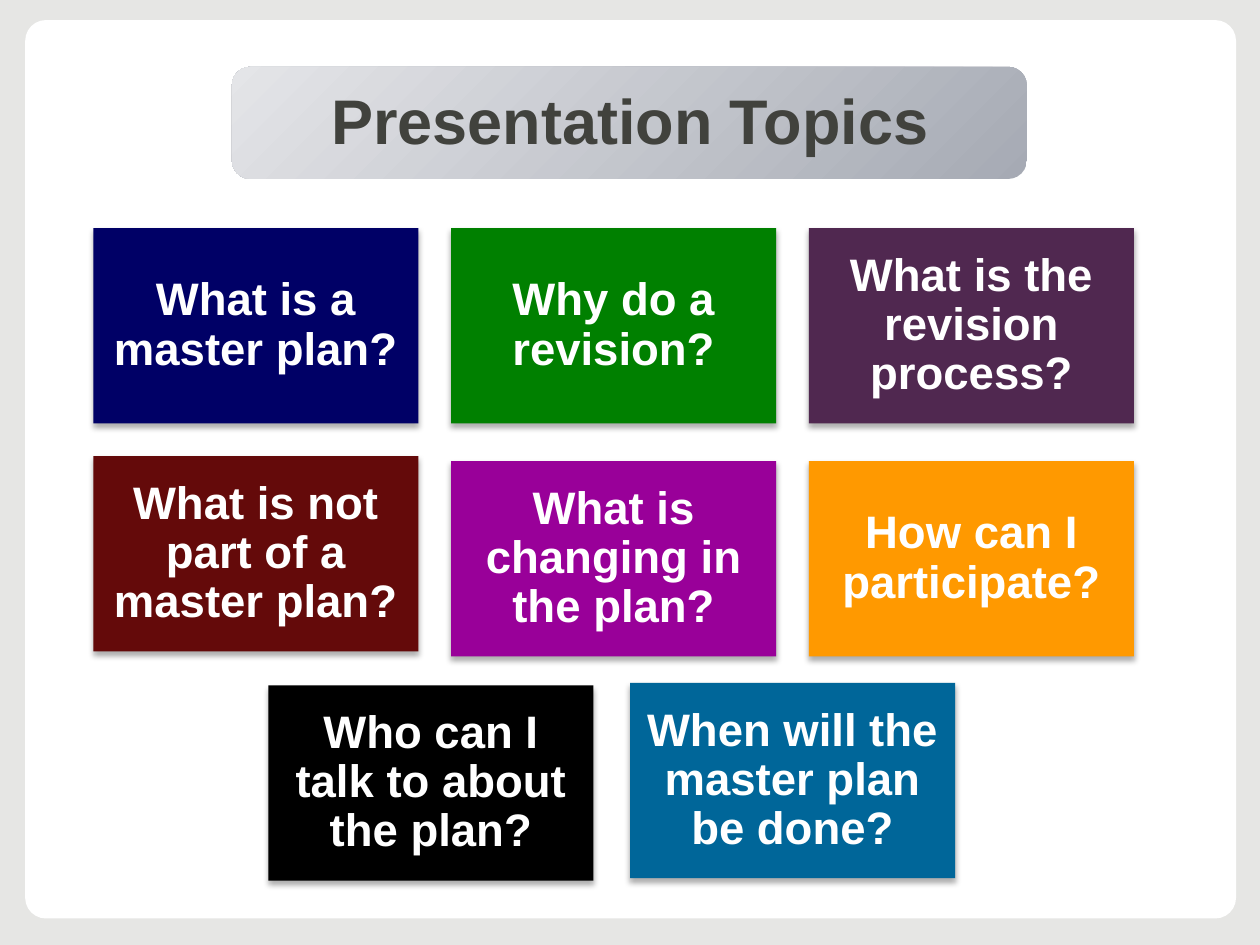
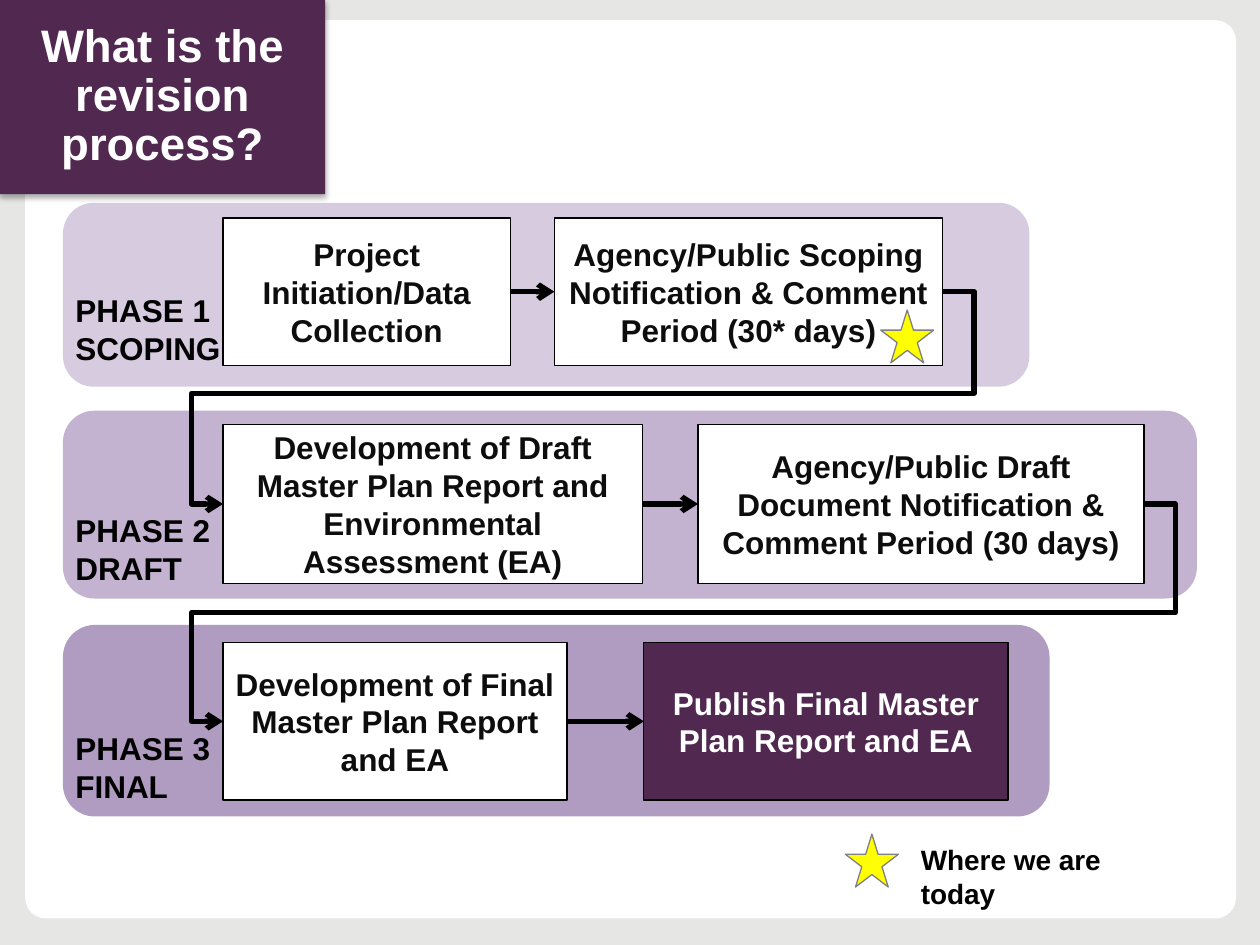
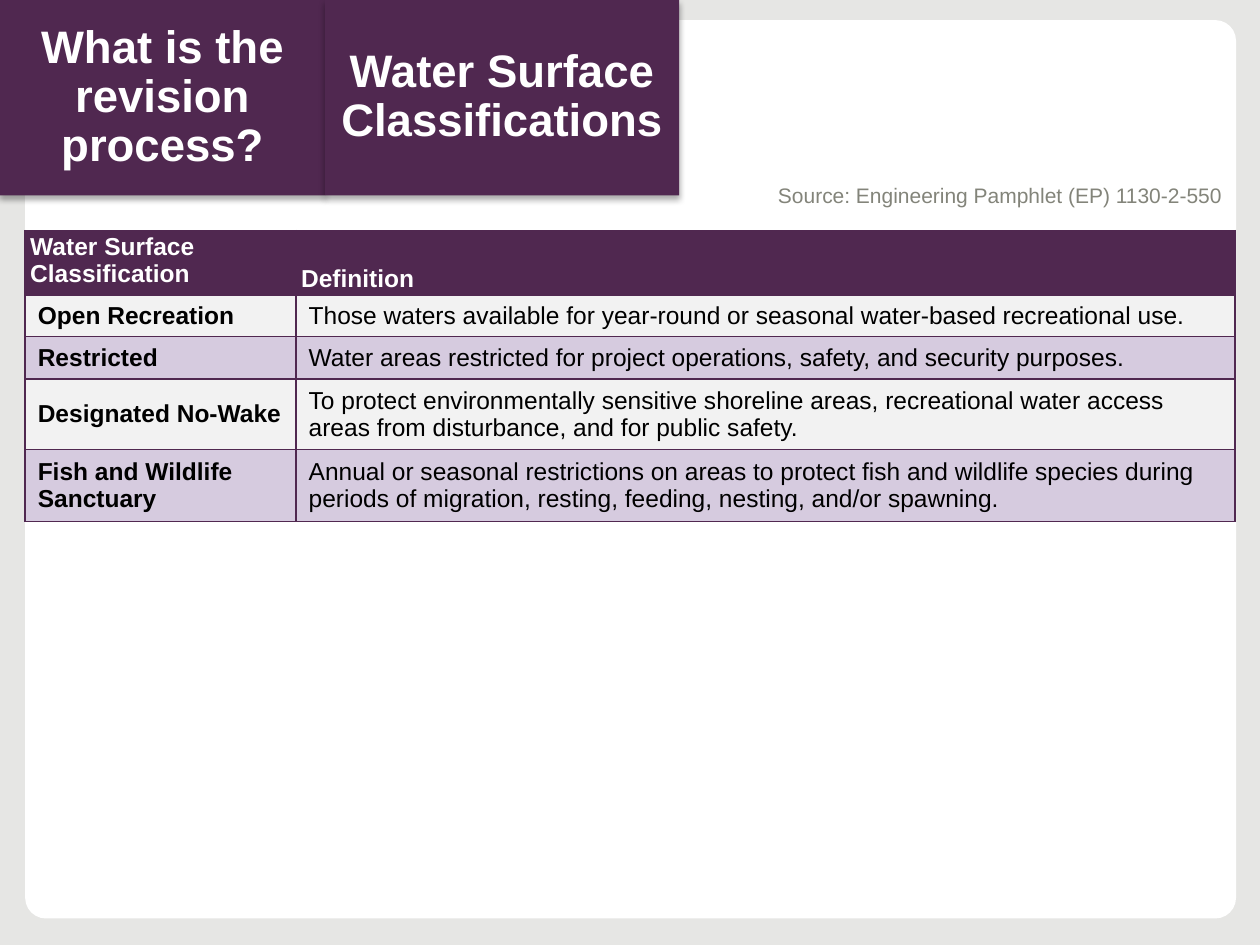
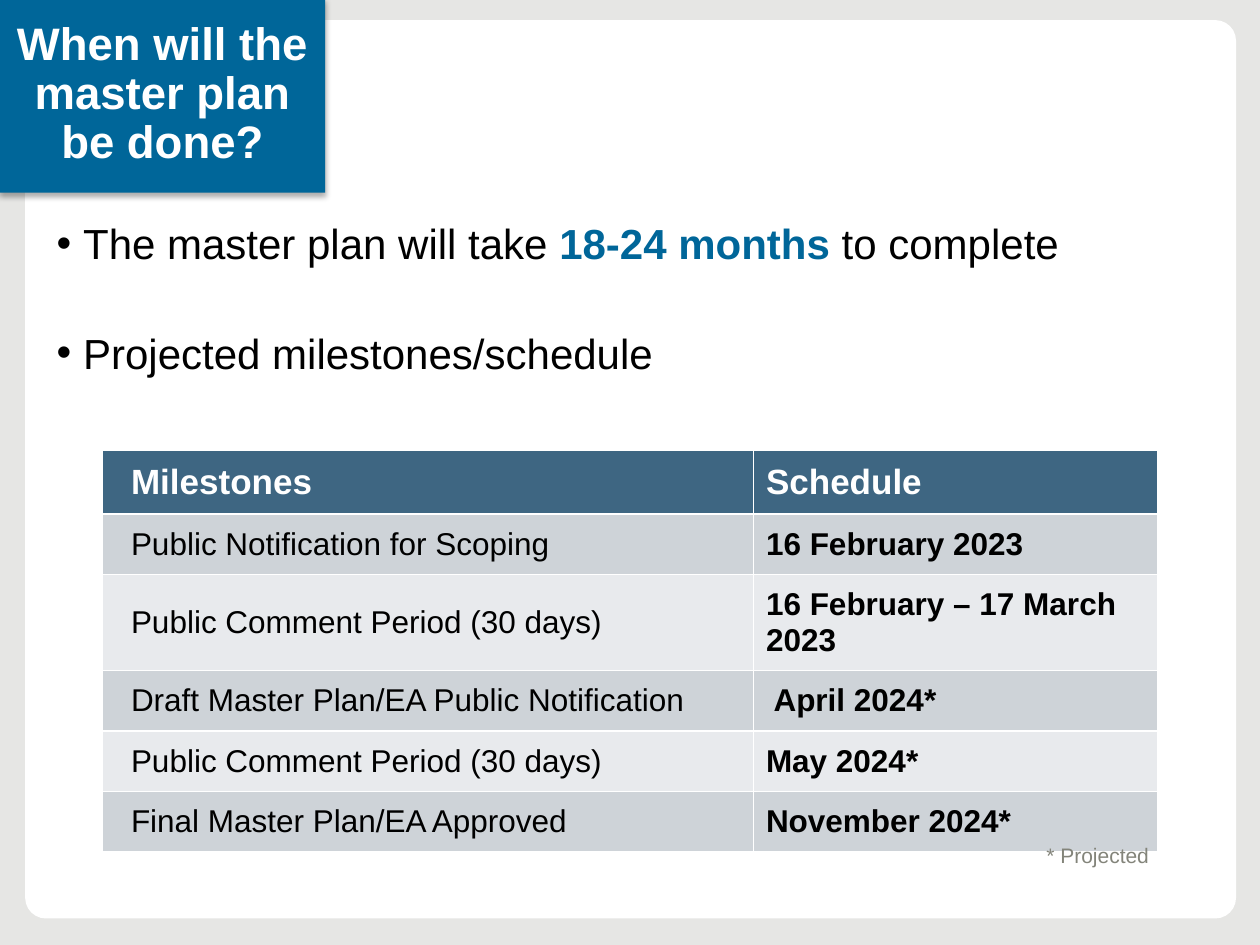
from lxml.etree import SubElement
from pptx import Presentation
from pptx.dml.color import RGBColor
from pptx.enum.shapes import MSO_CONNECTOR, MSO_SHAPE
from pptx.enum.text import MSO_ANCHOR, MSO_AUTO_SIZE, PP_ALIGN
from pptx.oxml.ns import qn
from pptx.util import Inches, Pt

FONT = "Arial"
WHITE = RGBColor(0xFF, 0xFF, 0xFF)
BLACK = RGBColor(0x00, 0x00, 0x00)
INK = RGBColor(0x0D, 0x0D, 0x0D)
CANVAS = RGBColor(0xE6, 0xE6, 0xE4)
CHARCOAL = RGBColor(0x41, 0x42, 0x3D)
NOTE_GRAY = RGBColor(0x83, 0x84, 0x7A)
BANNER_DARK = RGBColor(0xA6, 0xAA, 0xB4)
BANNER_LIGHT = RGBColor(0xE4, 0xE5, 0xE8)
NAVY = RGBColor(0x00, 0x00, 0x66)
GREEN = RGBColor(0x00, 0x80, 0x00)
PLUM = RGBColor(0x50, 0x28, 0x50)
MAROON = RGBColor(0x64, 0x0A, 0x0A)
MAGENTA = RGBColor(0x99, 0x00, 0x99)
ORANGE = RGBColor(0xFF, 0x99, 0x00)
BLUE = RGBColor(0x00, 0x66, 0x99)
YELLOW = RGBColor(0xFF, 0xFF, 0x00)
STAR_EDGE = RGBColor(0x80, 0x80, 0x80)
LILAC_LIGHT = RGBColor(0xD6, 0xCB, 0xDF)
LILAC = RGBColor(0xC3, 0xB3, 0xD1)
LILAC_DARK = RGBColor(0xB0, 0x9B, 0xC1)
PALE_GRAY = RGBColor(0xF2, 0xF2, 0xF2)
STEEL = RGBColor(0x3E, 0x66, 0x82)
STEEL_LIGHT = RGBColor(0xCE, 0xD3, 0xD8)
STEEL_PALE = RGBColor(0xE8, 0xEA, 0xED)

TILE_WIDTH, TILE_HEIGHT = 2.58, 1.55
TITLE_ONLY, TITLE_AND_CONTENT = 5, 1


def write(frame, *paragraphs, size, color=BLACK, bold=False, align=PP_ALIGN.LEFT,
          anchor=MSO_ANCHOR.TOP, margin=None, line_spacing=None):
    frame.word_wrap = True
    frame.auto_size = MSO_AUTO_SIZE.NONE
    frame.vertical_anchor = anchor
    if margin is not None:
        frame.margin_left = frame.margin_right = Inches(margin)
        frame.margin_top = frame.margin_bottom = Inches(margin)
    for index, content in enumerate(paragraphs):
        para = frame.add_paragraph() if index else frame.paragraphs[0]
        para.alignment = align
        para.line_spacing = line_spacing
        spans = [(content, {})] if isinstance(content, str) else content
        for text, override in spans:
            span = para.add_run()
            span.text = text
            span.font.name = FONT
            span.font.size = Pt(size)
            span.font.bold = override.get("bold", bold)
            span.font.color.rgb = override.get("color", color)


def move(shape, box):
    shape.left, shape.top, shape.width, shape.height = map(Inches, box)


def add_box(page, box, fill, kind=MSO_SHAPE.RECTANGLE, line=None):
    shape = page.shapes.add_shape(kind, *map(Inches, box))
    shape.shadow.inherit = False
    shape.fill.solid()
    shape.fill.fore_color.rgb = fill
    if line is None:
        shape.line.fill.background()
    else:
        shape.line.color.rgb = line
        shape.line.width = Pt(0.75)
    return shape


def add_label(page, box, *paragraphs, **style):
    label = page.shapes.add_textbox(*map(Inches, box))
    write(label.text_frame, *paragraphs, **style)


def cast_shadow(effects, blur, distance, angle, opacity):
    shadow = SubElement(effects, qn("a:outerShdw"), blurRad=str(Pt(blur)),
                        dist=str(Pt(distance)), dir=str(angle * 60000),
                        algn="tl", rotWithShape="0")
    shade = SubElement(shadow, qn("a:srgbClr"), val=str(BLACK))
    SubElement(shade, qn("a:alpha"), val=str(opacity * 1000))


def format_tile(tile, text, color):
    tile.fill.solid()
    tile.fill.fore_color.rgb = color
    tile.line.fill.background()
    tile.shadow.inherit = False
    cast_shadow(tile.element.spPr.find(qn("a:effectLst")), 3.5, 2.2, 90, 32)
    write(tile.text_frame, text, size=26, color=WHITE, bold=True, margin=0.11,
          align=PP_ALIGN.CENTER, anchor=MSO_ANCHOR.MIDDLE, line_spacing=0.9)


def add_tile(page, box, text, color):
    format_tile(add_box(page, box, color), text, color)


def title_tile(page, text, color, top=0):
    title = page.shapes.title
    move(title, (0, top, TILE_WIDTH, TILE_HEIGHT))
    format_tile(title, text, color)


def add_star(page, left, top):
    add_box(page, (left, top, 0.42, 0.42), YELLOW, MSO_SHAPE.STAR_5_POINT, STAR_EDGE)


def style_master(deck, page):
    master = deck.slide_master
    master.background.fill.solid()
    master.background.fill.fore_color.rgb = CANVAS
    panel = add_box(page, (0.2, 0.16, 9.61, 7.13), WHITE, MSO_SHAPE.ROUNDED_RECTANGLE)
    panel.adjustments[0] = 0.023
    master.shapes.element.insert(2, panel.element)


def add_banner(page, box, text):
    left, top, width, height = box
    banner = add_box(page, box, BANNER_LIGHT, MSO_SHAPE.ROUNDED_RECTANGLE)
    banner.fill.gradient()
    banner.fill.gradient_angle = 135
    for stop, color in zip(banner.fill.gradient_stops, (BANNER_DARK, BANNER_LIGHT)):
        stop.color.rgb = color
    title = page.shapes.title
    move(title, (0.5, top + 0.11, 9, 0.62))
    write(title.text_frame, text, size=36, color=CHARCOAL, bold=True,
          align=PP_ALIGN.CENTER, anchor=MSO_ANCHOR.MIDDLE)
    properties = title.text_frame.paragraphs[0].runs[0].font.fill
    properties = title.element.find(".//" + qn("a:rPr"))
    effects = SubElement(properties, qn("a:effectLst"))
    properties.find(qn("a:solidFill")).addnext(effects)
    cast_shadow(effects, 3, 3, 45, 43)
    page.shapes.element.append(title.element)


def build_topics(page):
    add_banner(page, (1.84, 0.53, 6.31, 0.89), "Presentation Topics")
    first, second, third = (0.74 + 2.84 * column for column in range(3))
    topics = [
        ("What is a master plan?", NAVY, first, 1.81),
        ("Why do a revision?", GREEN, second, 1.81),
        ("What is the revision process?", PLUM, third, 1.81),
        ("What is not part of a master plan?", MAROON, first, 3.62),
        ("How can I participate?", ORANGE, third, 3.66),
        ("What is changing in the plan?", MAGENTA, second, 3.66),
        ("When will the master plan be done?", BLUE, 5, 5.42),
        ("Who can I talk to about the plan?", BLACK, 2.13, 5.44),
    ]
    for text, color, left, top in topics:
        add_tile(page, (left, top, TILE_WIDTH, TILE_HEIGHT), text, color)


def add_arrow(page, kind, start, end):
    arrow = page.shapes.add_connector(kind, 0, 0, 0, 0)
    arrow.begin_connect(start, 3)
    arrow.end_connect(end, 1)
    arrow.line.color.rgb = BLACK
    arrow.line.width = Pt(3)
    SubElement(arrow.get_or_add_ln(), qn("a:tailEnd"), type="arrow")
    SubElement(arrow.element.spPr, qn("a:effectLst"))
    return arrow


def add_return_arrow(page, start, end, middle):
    arrow = add_arrow(page, MSO_CONNECTOR.ELBOW, start, end)
    geometry = arrow.element.spPr.find(qn("a:prstGeom"))
    geometry.set("prst", "bentConnector5")
    guides = geometry.find(qn("a:avLst"))
    overhang = Inches(0.25) / arrow.width
    for index, ratio in enumerate((-overhang, middle, 1 + overhang), 1):
        SubElement(guides, qn("a:gd"), name=f"adj{index}",
                   fmla=f"val {round(ratio * 100000)}")


def add_phase(page, box, color, label, label_drop, step_drop, step_height, steps):
    left, top, width, height = box
    add_box(page, box, color, MSO_SHAPE.ROUNDED_RECTANGLE)
    shapes = []
    for text, offset, step_width, fill, ink in steps:
        step = add_box(page, (left + offset, top + step_drop, step_width, step_height),
                       fill, line=BLACK)
        write(step.text_frame, text, size=18, color=ink, bold=True,
              align=PP_ALIGN.CENTER, anchor=MSO_ANCHOR.MIDDLE)
        shapes.append(step)
    add_arrow(page, MSO_CONNECTOR.STRAIGHT, *shapes)
    add_label(page, (left, top + label_drop, 1.4, 0.71), *label, size=18, bold=True)
    return shapes


def add_legend(page, left, top):
    add_star(page, left, top)
    add_label(page, (left + 0.5, top + 0.02, 2.09, 0.6), "Where we are today",
              size=16, bold=True)


def build_process(page):
    title_tile(page, "What is the revision process?", PLUM, top=-0.01)
    scoping = add_phase(
        page, (0.5, 1.61, 7.67, 1.46), LILAC_LIGHT, ("PHASE 1", "SCOPING"), 0.65, 0.12, 1.17,
        [("Project Initiation/Data Collection", 1.27, 2.28, WHITE, INK),
         ("Agency/Public Scoping Notification & Comment Period (30* days)",
          3.9, 3.08, WHITE, INK)])
    draft = add_phase(
        page, (0.5, 3.26, 9, 1.49), LILAC, ("PHASE 2", "DRAFT"), 0.75, 0.11, 1.26,
        [("Development of Draft Master Plan Report and Environmental Assessment (EA)",
          1.27, 3.33, WHITE, INK),
         ("Agency/Public Draft Document Notification & Comment Period (30 days)",
          5.04, 3.54, WHITE, INK)])
    final = add_phase(
        page, (0.5, 4.96, 7.83, 1.52), LILAC_DARK, ("PHASE 3", "FINAL"), 0.78, 0.14, 1.25,
        [("Development of Final Master Plan Report and EA", 1.27, 2.73, WHITE, INK),
         ("Publish Final Master Plan Report and EA", 4.61, 2.89, PLUM, WHITE)])
    add_return_arrow(page, scoping[1], draft[0], 0.48)
    add_return_arrow(page, draft[1], final[0], 0.5)
    add_star(page, 6.99, 2.46)
    add_legend(page, 6.71, 6.62)


def outline_cell(cell, color):
    properties = cell._tc.get_or_add_tcPr()
    for side in ("a:lnL", "a:lnR", "a:lnT", "a:lnB"):
        edge = SubElement(properties, qn(side), w=str(Pt(1)))
        SubElement(SubElement(edge, qn("a:solidFill")), qn("a:srgbClr"), val=str(color))


def add_grid(page, left, top, widths, heights, rows, *, border, header, stripes,
             header_size, size, bold_column, margins):
    frame = page.shapes.add_table(
        len(rows), len(widths), *map(Inches, (left, top, sum(widths), sum(heights))))
    grid = frame.table
    for column, width in zip(grid.columns, widths):
        column.width = Inches(width)
    for row_index, (row, height, texts) in enumerate(zip(grid.rows, heights, rows)):
        row.height = Inches(height)
        is_header = row_index == 0
        for column_index, (cell, text) in enumerate(zip(row.cells, texts)):
            outline_cell(cell, border)
            cell.fill.solid()
            cell.fill.fore_color.rgb = header if is_header else stripes[(row_index - 1) % 2]
            write(cell.text_frame, text, size=header_size if is_header else size,
                  color=WHITE if is_header else BLACK,
                  bold=is_header or column_index == bold_column)
            cell.vertical_anchor = MSO_ANCHOR.MIDDLE
            set_margins(cell, *margins)
    return grid


def set_margins(cell, left, top, right, bottom):
    cell.margin_left, cell.margin_top = Inches(left), Inches(top)
    cell.margin_right, cell.margin_bottom = Inches(right), Inches(bottom)


def build_classifications(page):
    add_tile(page, (TILE_WIDTH, 0, 2.81, TILE_HEIGHT), "Water Surface Classifications", PLUM)
    title_tile(page, "What is the revision process?", PLUM)
    add_label(page, (5.97, 1.4, 3.83, 0.3), "Source: Engineering Pamphlet (EP) 1130-2-550",
              size=12, color=NOTE_GRAY, align=PP_ALIGN.RIGHT)
    rows = [
        ("Water Surface Classification", "Definition"),
        ("Open Recreation",
         "Those waters available for year-round or seasonal water-based recreational use."),
        ("Restricted",
         "Water areas restricted for project operations, safety, and security purposes."),
        ("Designated No-Wake",
         "To protect environmentally sensitive shoreline areas, recreational water access "
         "areas from disturbance, and for public safety."),
        ("Fish and Wildlife Sanctuary",
         "Annual or seasonal restrictions on areas to protect fish and wildlife species during "
         "periods of migration, resting, feeding, nesting, and/or spawning."),
    ]
    grid = add_grid(page, 0.2, 1.83, (2.15, 7.45), (0.51, 0.33, 0.34, 0.56, 0.57), rows,
                    border=PLUM, header=PLUM, stripes=(PALE_GRAY, LILAC_LIGHT),
                    header_size=14, size=14, bold_column=0, margins=(0.1, 0.05, 0.1, 0.05))
    for cell, anchor in zip(grid.rows[0].cells, (MSO_ANCHOR.TOP, MSO_ANCHOR.BOTTOM)):
        set_margins(cell, 0.04, 0.02, 0.04, 0.02)
        cell.vertical_anchor = anchor


def add_bullets(page, box, *items):
    body = page.placeholders[1]
    move(body, box)
    write(body.text_frame, *items, size=24)
    for index, para in enumerate(body.text_frame.paragraphs):
        para.space_before = Pt(33.5 if index else 0)
        properties = para._p.get_or_add_pPr()
        properties.set("marL", str(Inches(0.21)))
        properties.set("indent", str(Inches(-0.21)))
        SubElement(properties, qn("a:buChar"), char="•")


def build_schedule(page):
    add_bullets(page, (0.35, 1.68, 9.38, 1.7),
                [("The master plan will take ", {}),
                 ("18-24 months ", {"color": BLUE, "bold": True}),
                 ("to complete", {})],
                "Projected milestones/schedule")
    title_tile(page, "When will the master plan be done?", BLUE, top=-0.02)
    rows = [
        ("Milestones", "Schedule"),
        ("Public Notification for Scoping", "16 February 2023"),
        ("Public Comment Period (30 days)", "16 February – 17 March 2023"),
        ("Draft Master Plan/EA Public Notification", "April 2024*"),
        ("Public Comment Period (30 days)", "May 2024*"),
        ("Final Master Plan/EA Approved", "November 2024*"),
    ]
    grid = add_grid(page, 0.81, 3.57, (5.17, 3.21), (0.51, 0.48, 0.76, 0.48, 0.48, 0.48), rows,
                    border=WHITE, header=STEEL, stripes=(STEEL_LIGHT, STEEL_PALE),
                    header_size=20, size=18, bold_column=1, margins=(0.1, 0.1, 0, 0.1))
    for row in grid.rows:
        row.cells[0].margin_left = Inches(0.23)
    grid.cell(3, 1).margin_left = Inches(0.16)
    add_label(page, (5.5, 6.69, 3.62, 0.22), "* Projected", size=12, color=NOTE_GRAY,
              align=PP_ALIGN.RIGHT, margin=0)


def main():
    deck = Presentation()
    deck.slide_width, deck.slide_height = Inches(10), Inches(7.5)
    builders = [
        (build_topics, TITLE_ONLY),
        (build_process, TITLE_ONLY),
        (build_classifications, TITLE_ONLY),
        (build_schedule, TITLE_AND_CONTENT),
    ]
    for index, (build, layout) in enumerate(builders):
        page = deck.slides.add_slide(deck.slide_layouts[layout])
        if index == 0:
            style_master(deck, page)
        build(page)
    deck.save("out.pptx")


if __name__ == "__main__":
    main()
